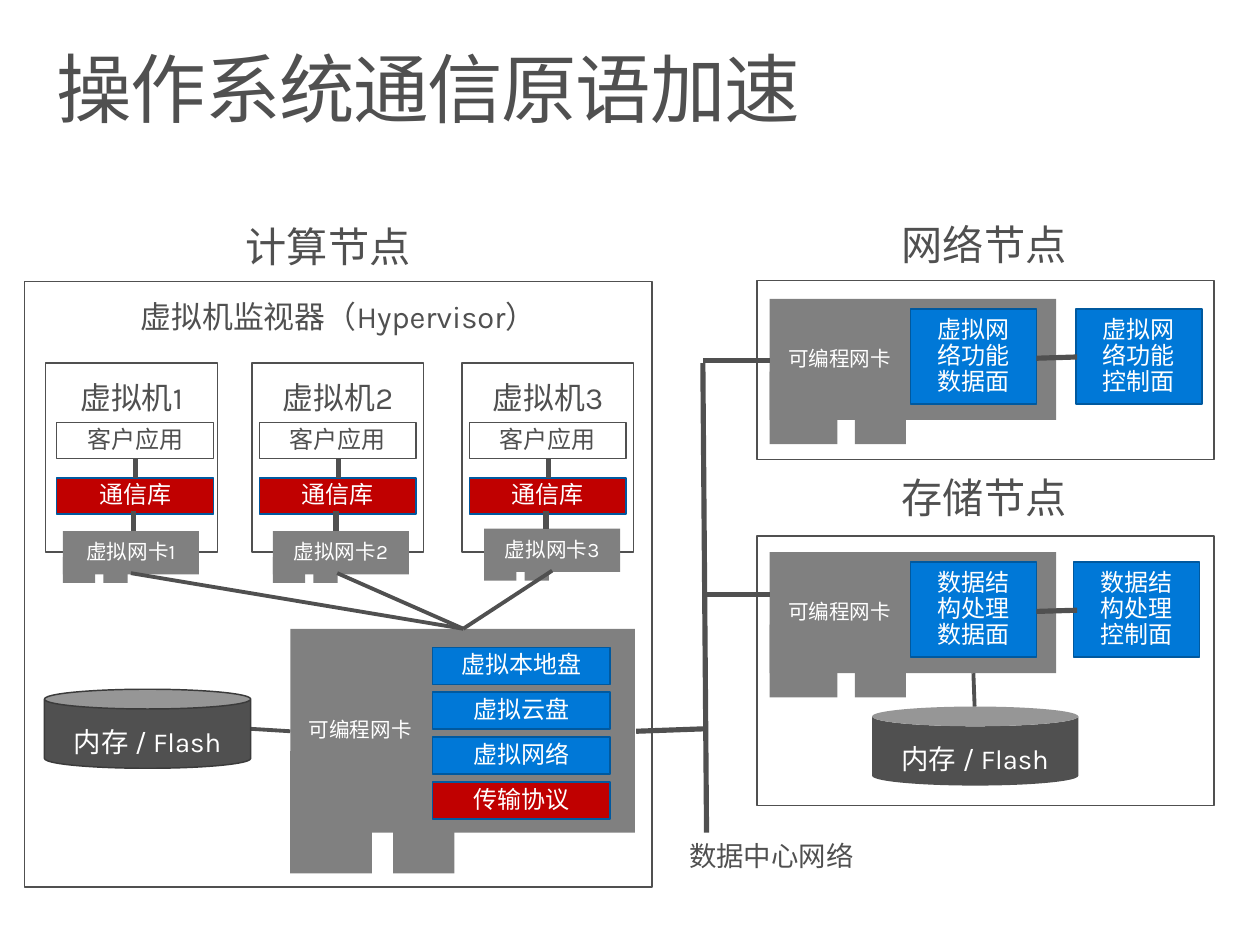
from pptx import Presentation
from pptx.dml.color import RGBColor
from pptx.enum.shapes import MSO_CONNECTOR, MSO_SHAPE
from pptx.enum.text import MSO_ANCHOR, MSO_AUTO_SIZE, PP_ALIGN
from pptx.oxml.ns import qn
from pptx.util import Inches, Pt

RECT, CAN = MSO_SHAPE.RECTANGLE, MSO_SHAPE.CAN
STRAIGHT = MSO_CONNECTOR.STRAIGHT
TOP, MIDDLE = MSO_ANCHOR.TOP, MSO_ANCHOR.MIDDLE
LEFT, CENTER = PP_ALIGN.LEFT, PP_ALIGN.CENTER
NO_FIT, GROW = MSO_AUTO_SIZE.NONE, MSO_AUTO_SIZE.SHAPE_TO_FIT_TEXT

WHITE = RGBColor(0xFF, 0xFF, 0xFF)
INK = RGBColor(0x50, 0x50, 0x50)
DARK_EDGE = RGBColor(0x3B, 0x3B, 0x3B)
GRAY = RGBColor(0x80, 0x80, 0x80)
BLUE = RGBColor(0x00, 0x78, 0xD7)
BLUE_EDGE = RGBColor(0x00, 0x59, 0x9F)
RED = RGBColor(0xC0, 0x00, 0x00)


def apply(target, values):
    for name, value in values.items():
        setattr(target, name, value)


class Diagram:
    font_name = "Karla"
    edge_width = Pt(0.85)
    wide_margins = (0.2, 0.16)
    card_margins = (0.15, 0.12)

    def __init__(self, slide):
        self.slide = slide
        self.shapes = slide.shapes

    def set_text(self, shape, text, size, color, align=CENTER, anchor=MIDDLE,
                 margins=wide_margins, wrap=True, fit=NO_FIT, after=0):
        side, end = map(Inches, margins)
        frame = shape.text_frame
        frame.text = text
        apply(frame, {"margin_left": side, "margin_right": side,
                      "margin_top": end, "margin_bottom": end,
                      "vertical_anchor": anchor, "word_wrap": wrap,
                      "auto_size": fit})
        paragraph = frame.paragraphs[0]
        apply(paragraph, {"alignment": align, "line_spacing": 0.9,
                          "space_before": Pt(0), "space_after": Pt(after)})
        run = paragraph.runs[0]
        apply(run.font, {"name": self.font_name, "size": Pt(size), "bold": False})
        run.font.color.rgb = color
        return run

    def title(self, text, *box):
        heading = self.shapes.title
        apply(heading, dict(zip(("left", "top", "width", "height"), map(Inches, box))))
        run = self.set_text(heading, text, 44, INK, LEFT, TOP, (0.16, 0.1))
        run.font._element.set("spc", "-80")

    def label(self, text, left, top, height, size):
        caption = self.shapes.add_textbox(*map(Inches, (left, top, 1.75, height)))
        self.set_text(caption, text, size, INK, LEFT, TOP, wrap=False, fit=GROW, after=6)

    def block(self, box, fill, edge=None, kind=RECT, shapes=None):
        block = (shapes or self.shapes).add_shape(kind, *map(Inches, box))
        block.shadow.inherit = False
        block.fill.solid()
        block.fill.fore_color.rgb = fill
        if edge is None:
            block.line.fill.background()
        else:
            block.line.color.rgb = edge
            block.line.width = self.edge_width
        return block

    def frame(self, *box, text=None):
        outline = self.block(box, WHITE, INK)
        if text:
            self.set_text(outline, text, 18, INK, anchor=TOP)

    def module(self, text, *box, fill=BLUE, edge=BLUE_EDGE, color=WHITE):
        self.set_text(self.block(box, fill, edge), text, 14, color)

    def memory(self, left, top, edge=None):
        drum = self.block((left, top, 1.67, 0.64), INK, edge, CAN)
        self.set_text(drum, "内存 / Flash", 16, WHITE, anchor=TOP)

    def card(self, text, left, top, width, height, align=LEFT):
        group = self.shapes.add_group_shape().shapes
        for offset, share in ((0, 0.237), (0.298, 0.178)):
            foot = (left + offset * width, top + 0.6 * height, share * width, 0.6 * height)
            self.block(foot, GRAY, shapes=group)
        board = self.block((left, top, width, height), GRAY, shapes=group)
        self.set_text(board, text, 12, WHITE, align, margins=self.card_margins)

    def wire(self, *ends, width=3.0):
        wire = self.shapes.add_connector(STRAIGHT, *map(Inches, ends))
        wire.line.color.rgb = INK
        wire.line.width = Pt(width)
        properties = wire._element.spPr
        properties.append(properties.makeelement(qn("a:effectLst"), {}))


def draw_compute_node(diagram):
    diagram.label("计算节点", 1.79, 1.68, 0.69, 24)
    diagram.frame(0.2, 2.28, 5.08, 4.9, text="虚拟机监视器（Hypervisor）")
    diagram.card("可编程网卡", 2.35, 5.09, 2.79, 1.65)

    machines = ((0.37, 0.46, 0.51, 4.3, 1.06), (2.04, 2.1, 2.21, 4.3, 2.73),
                (3.74, 3.8, 3.92, 4.28, 4.47))
    for number, (left, inner, card_left, card_top, uplink) in enumerate(machines, 1):
        diagram.frame(left, 2.94, 1.39, 1.53, text=f"虚拟机{number}")
        diagram.card(f"虚拟网卡{number}", card_left, card_top, 1.1, 0.35, CENTER)
        diagram.module("客户应用", inner, 3.42, 1.27, 0.29,
                       fill=WHITE, edge=INK, color=INK)
        diagram.module("通信库", inner, 3.87, 1.27, 0.29, fill=RED)
        diagram.wire(inner + 0.64, 3.71, inner + 0.64, 3.87)
        diagram.wire(inner + 0.62, 4.14, inner + 0.62, card_top)
        diagram.wire(uplink, card_top + 0.34, 3.75, 5.09, width=2.25)

    services = (("虚拟本地盘", BLUE), ("虚拟云盘", BLUE),
                ("虚拟网络", BLUE), ("传输协议", RED))
    for row, (service, fill) in enumerate(services):
        diagram.module(service, 3.5, 5.24 + row * 1.09 / 3, 1.44, 0.3, fill=fill)
    diagram.wire(2.03, 5.9, 2.35, 5.92, width=2.25)
    diagram.memory(0.36, 5.58, DARK_EDGE)


def draw_remote_nodes(diagram):
    nodes = (("网络节点", "虚拟网络功能", 2.27, 1.45, 8.71),
             ("存储节点", "数据结构处理", 4.34, 2.18, 8.69))
    for row, (node, function, top, height, control_left) in enumerate(nodes):
        shift = row * 2.05
        diagram.label(node, 7.1, 1.66 + shift, 0.69, 24)
        diagram.frame(6.13, top, 3.7, height)
        diagram.card("可编程网卡", 6.23, 2.42 + shift, 2.32, 0.98)
        for plane, left in (("数据面", 7.37), ("控制面", control_left)):
            diagram.module(function + plane, left, 2.5 + shift, 1.02, 0.77)
        diagram.wire(8.39, 2.9 + shift, 8.72, 2.89 + shift)
    diagram.memory(7.06, 5.72)
    diagram.wire(7.88, 5.45, 7.89, 5.72, width=2.25)


def draw_network(diagram):
    diagram.wire(5.69, 2.94, 5.72, 6.74)
    diagram.wire(5.69, 2.92, 6.23, 2.92)
    diagram.wire(5.72, 4.81, 6.23, 4.81)
    diagram.wire(5.15, 5.92, 5.7, 5.9)
    diagram.label("数据中心网络", 5.38, 6.7, 0.57, 16)


def main():
    deck = Presentation()
    deck.slide_width, deck.slide_height = Inches(10.2), Inches(7.65)
    diagram = Diagram(deck.slides.add_slide(deck.slide_layouts[5]))
    diagram.title("操作系统通信原语加速", 0.3, 0.32, 9.6, 1)
    draw_compute_node(diagram)
    draw_remote_nodes(diagram)
    draw_network(diagram)
    deck.save("out.pptx")


if __name__ == "__main__":
    main()
